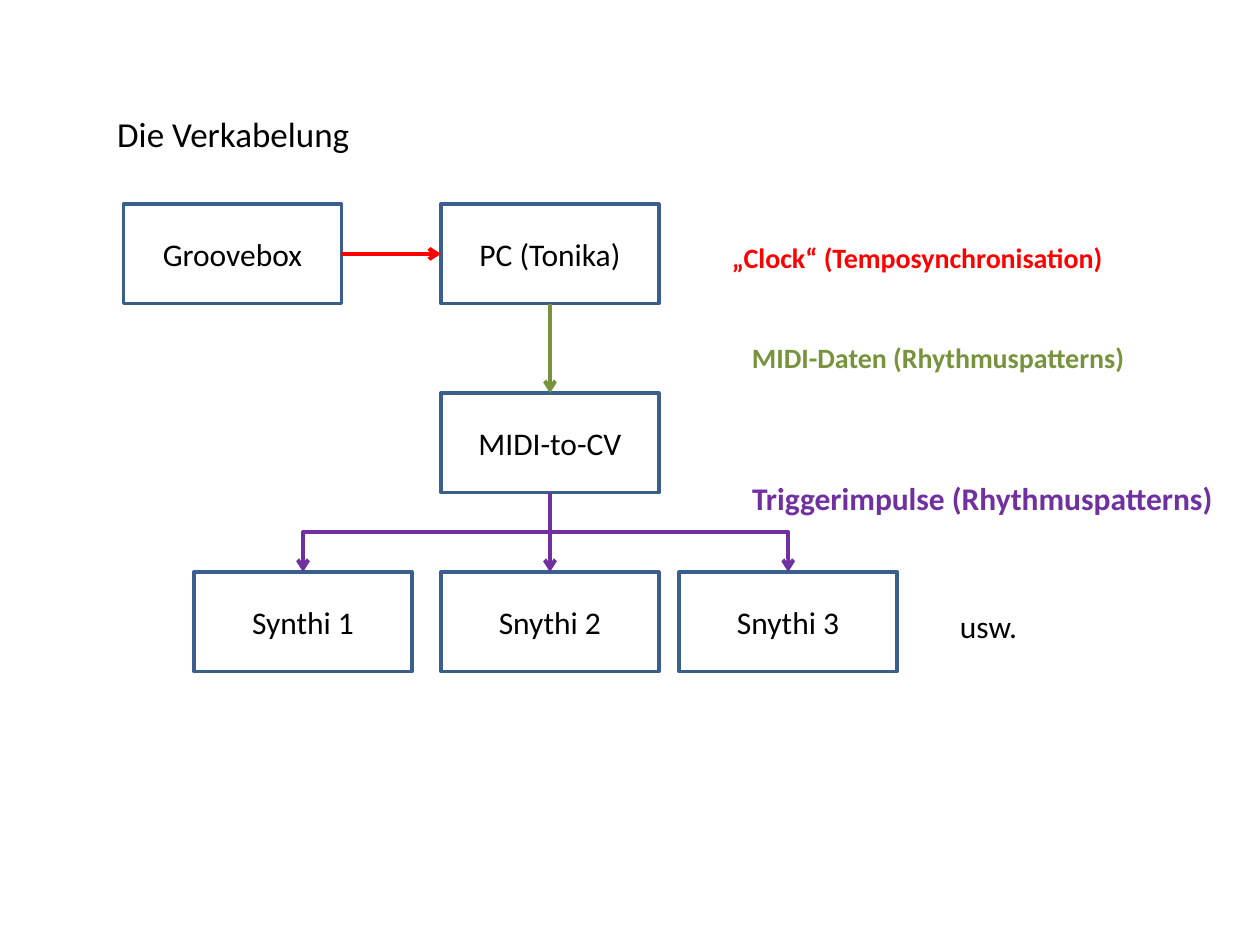
from lxml import etree
from pptx import Presentation
from pptx.dml.color import RGBColor
from pptx.enum.shapes import MSO_CONNECTOR, MSO_SHAPE
from pptx.enum.text import MSO_ANCHOR, MSO_AUTO_SIZE, PP_ALIGN
from pptx.oxml.ns import qn
from pptx.util import Inches, Pt

RECTANGLE = MSO_SHAPE.RECTANGLE
STRAIGHT, ELBOW = MSO_CONNECTOR.STRAIGHT, MSO_CONNECTOR.ELBOW
TOP, MIDDLE = MSO_ANCHOR.TOP, MSO_ANCHOR.MIDDLE
LEFT, CENTER = PP_ALIGN.LEFT, PP_ALIGN.CENTER
FIT_SHAPE = MSO_AUTO_SIZE.SHAPE_TO_FIT_TEXT

# Connection sites of a rectangle
SITE_TOP, SITE_LEFT, SITE_BOTTOM, SITE_RIGHT = range(4)

BLACK, WHITE, BORDER = "000000", "FFFFFF", "3A5F8C"
CLOCK, MIDI, TRIGGER = "FF0000", "77933C", "7030A0"
BOX_WIDTH, BOX_HEIGHT = 1.73, 0.79

# Device name: text, left, top
DEVICES = {
    "groovebox": ("Groovebox", 0.98, 1.62),
    "computer": ("PC (Tonika)", 3.5, 1.62),
    "converter": ("MIDI-to-CV", 3.5, 3.12),
    "synth 1": ("Synthi 1", 1.54, 4.54),
    "synth 2": ("Snythi 2", 3.5, 4.54),
    "synth 3": ("Snythi 3", 5.39, 4.54),
}

# Text, (left, top, width, height), format
LABELS = [
    ("usw.", (7.52, 4.77, 0.66, 0.4), {"size": 18}),
    ("„Clock“ (Temposynchronisation)", (5.71, 1.86, 3.19, 0.37),
     {"size": 16, "color": CLOCK, "bold": True}),
    ("MIDI-Daten (Rhythmuspatterns)", (5.87, 2.65, 3.2, 0.37),
     {"size": 16, "color": MIDI, "bold": True}),
    ("Triggerimpulse (Rhythmuspatterns)", (5.87, 3.75, 3.89, 0.4),
     {"size": 18, "color": TRIGGER, "bold": True}),
]


def rgb(color):
    return RGBColor.from_string(color)


def write_text(shape, text, alignment, size=18, color=BLACK, bold=False):
    paragraph = shape.text_frame.paragraphs[0]
    paragraph.alignment = alignment
    run = paragraph.add_run()
    run.text = text
    values = {"name": "Calibri", "size": Pt(size), "bold": bold}
    for name, value in values.items():
        setattr(run.font, name, value)
    run.font.color.rgb = rgb(color)


def format_label(shape, text, text_format):
    """Left-aligned single line whose frame fits its text."""
    values = {"word_wrap": False, "auto_size": FIT_SHAPE, "vertical_anchor": TOP}
    for name, value in values.items():
        setattr(shape.text_frame, name, value)
    write_text(shape, text, LEFT, **text_format)


def add_title(slide, text):
    title = slide.shapes.title
    values = {"left": 0.83, "top": 0.84, "width": 2.06, "height": 0.44}
    for name, value in values.items():
        setattr(title, name, Inches(value))
    format_label(title, text, {"size": 20})


def add_label(slide, text, box, text_format):
    shape = slide.shapes.add_textbox(*map(Inches, box))
    format_label(shape, text, text_format)


def add_device(slide, text, left, top):
    shape = slide.shapes.add_shape(
        RECTANGLE, *map(Inches, (left, top, BOX_WIDTH, BOX_HEIGHT)))
    shape.shadow.inherit = False
    shape.fill.solid()
    shape.fill.fore_color.rgb = rgb(WHITE)
    shape.line.color.rgb = rgb(BORDER)
    shape.line.width = Pt(2)
    shape.text_frame.vertical_anchor = MIDDLE
    write_text(shape, text, CENTER)
    return shape


def add_arrow(slide, kind, source, source_site, target, target_site, color):
    connector = slide.shapes.add_connector(kind, 0, 0, 0, 0)
    connector.begin_connect(source, source_site)
    connector.end_connect(target, target_site)
    connector.line.color.rgb = rgb(color)
    connector.line.width = Pt(2.25)
    line = connector.line._get_or_add_ln()
    etree.SubElement(line, qn("a:tailEnd"), type="arrow")
    etree.SubElement(connector._element.spPr, qn("a:effectLst"))
    return connector


def add_branch(slide, source, target, color):
    """Elbow from the bottom of source to the top of target."""
    connector = add_arrow(slide, ELBOW, source, SITE_BOTTOM, target, SITE_TOP, color)
    to_right = connector.end_x > connector.begin_x
    left, top = connector.left, connector.top
    width, height = connector.width, connector.height
    # A quarter turn makes the elbow start and end vertically
    frame = {
        "left": left + (width - height) // 2,
        "top": top + (height - width) // 2,
        "width": height,
        "height": width,
    }
    for name, value in frame.items():
        setattr(connector, name, value)
    transform = connector._element.spPr.find(qn("a:xfrm"))
    transform.set("rot", str((270 if to_right else 90) * 60000))
    transform.set("flipH", "1" if to_right else "0")


def main():
    presentation = Presentation()
    presentation.slide_width = Inches(10)
    presentation.slide_height = Inches(7.5)
    slide = presentation.slides.add_slide(presentation.slide_layouts[5])

    add_title(slide, "Die Verkabelung")
    devices = {name: add_device(slide, *device) for name, device in DEVICES.items()}

    # Signal flow
    computer, converter = devices["computer"], devices["converter"]
    add_arrow(slide, STRAIGHT, devices["groovebox"], SITE_RIGHT,
              computer, SITE_LEFT, CLOCK)
    add_arrow(slide, STRAIGHT, computer, SITE_BOTTOM, converter, SITE_TOP, MIDI)
    add_arrow(slide, STRAIGHT, converter, SITE_BOTTOM,
              devices["synth 2"], SITE_TOP, TRIGGER)
    for name in ("synth 1", "synth 3"):
        add_branch(slide, converter, devices[name], TRIGGER)

    # Legend and continuation
    for label in LABELS:
        add_label(slide, *label)

    presentation.save("out.pptx")


if __name__ == "__main__":
    main()
